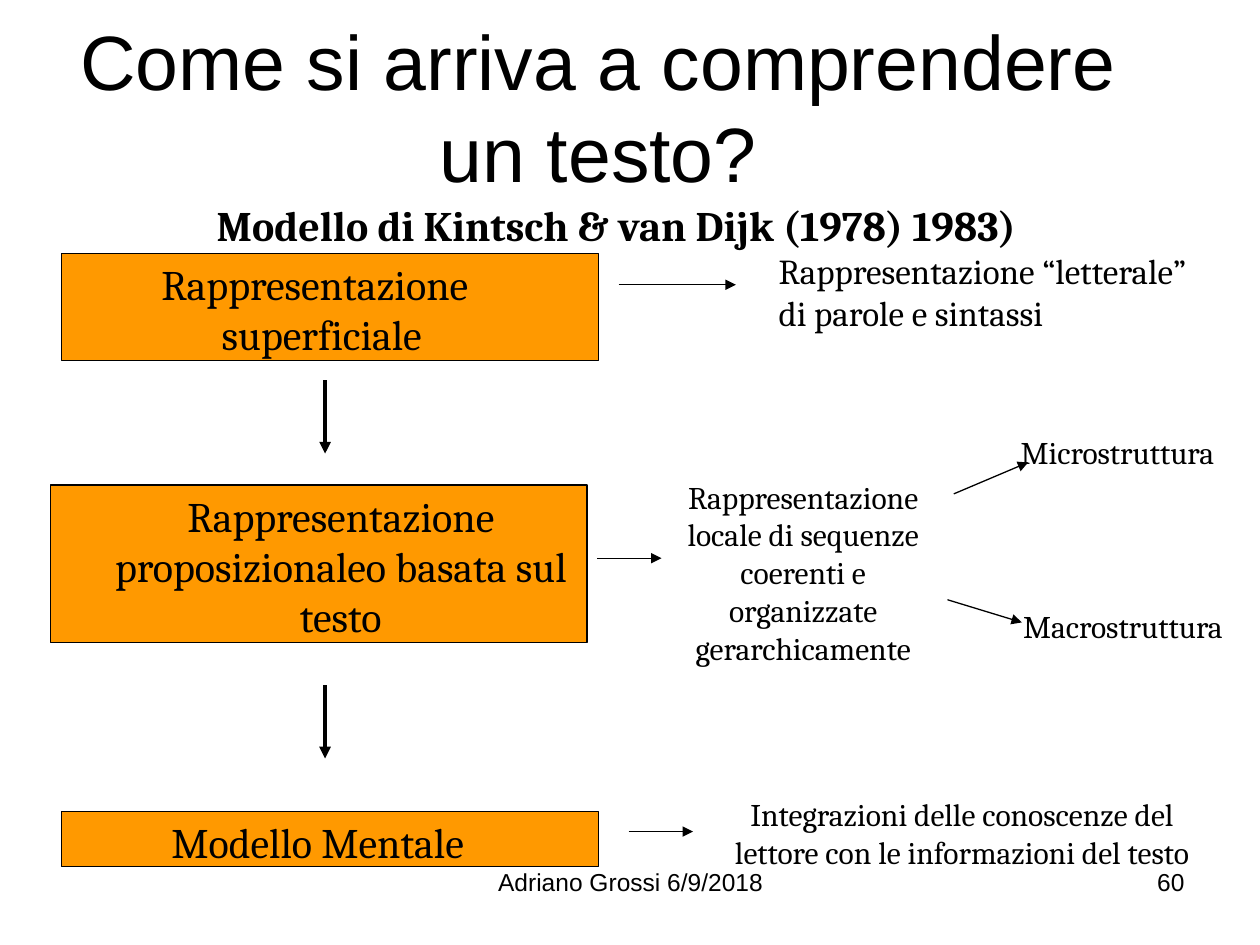
"""Build the slide on the Kintsch and van Dijk model of text comprehension."""
from dataclasses import dataclass

import lxml.etree
import pptx
import pptx.dml.color
import pptx.enum.shapes
import pptx.enum.text
import pptx.oxml.ns
import pptx.slide
import pptx.text.text
import pptx.util

Inches = pptx.util.Inches
Align = pptx.enum.text.PP_ALIGN
Anchor = pptx.enum.text.MSO_ANCHOR


@dataclass(frozen=True)
class Theme:
    ink: pptx.dml.color.RGBColor = pptx.dml.color.RGBColor(0, 0, 0)
    stage_fill: pptx.dml.color.RGBColor = pptx.dml.color.RGBColor(0xFF, 0x99, 0x00)
    serif: str = "Cambria"
    sans: str = "Arial"
    title: int = 44
    heading: int = 24
    explanation: int = 20
    note: int = 18
    footer: int = 14
    thin: float = 0.75
    thick: float = 2.25


THEME = Theme()


@dataclass(frozen=True)
class Stage:
    text: str
    left: float
    top: float
    height: float
    margin: float
    indent: float = 0
    align: Align = Align.LEFT


@dataclass(frozen=True)
class Label:
    text: str
    left: float
    top: float
    width: float
    height: float
    size: int = THEME.note
    align: Align = Align.LEFT
    font: str = THEME.serif
    bold: bool = False
    inset_x: float = 0
    inset_y: float = 0


@dataclass(frozen=True)
class Arrow:
    start: tuple[float, float]
    end: tuple[float, float]
    width: float = THEME.thin


STAGE_WIDTH = 4.26
STAGES = (
    Stage("Rappresentazione superficiale", 0.49, 2.01, 0.85, 1.27, -0.48),
    Stage("Rappresentazione proposizionaleo basata sul testo", 0.4, 3.85, 1.25, 0.35, align=Align.CENTER),
    Stage("Modello Mentale", 0.49, 6.44, 0.44, 0.87),
)
LABELS = (
    Label("Modello di Kintsch & van Dijk (1978) 1983)", 1.72, 1.58, 6.6, 0.81, THEME.heading, bold=True),
    Label("Rappresentazione “letterale” di parole e sintassi", 6.18, 1.98, 3.4, 0.68, THEME.explanation),
    Label("Rappresentazione locale di sequenze coerenti e organizzate gerarchicamente",
          5.36, 3.79, 2.03, 1.52, align=Align.CENTER),
    Label("Microstruttura", 8.1, 3.44, 1.68, 0.31),
    Label("Macrostruttura", 8.12, 4.82, 1.73, 0.31),
    Label("Integrazioni delle conoscenze del lettore con le informazioni del testo",
          5.79, 6.31, 3.69, 0.91, align=Align.CENTER),
    Label("Adriano Grossi 6/9/2018", 3.42, 6.83, 3.17, 0.52, THEME.footer, Align.CENTER, THEME.sans,
          inset_x=0.1, inset_y=0.05),
    Label("60", 7.17, 6.83, 2.33, 0.52, THEME.footer, Align.RIGHT, THEME.sans, inset_x=0.1, inset_y=0.05),
)
ARROWS = (
    Arrow((4.91, 2.26), (5.84, 2.26)),
    Arrow((4.74, 4.43), (5.25, 4.43)),
    Arrow((4.99, 6.6), (5.5, 6.6)),
    Arrow((7.57, 3.92), (8.16, 3.67)),
    Arrow((7.52, 4.76), (8.11, 4.94)),
    Arrow((2.58, 3.02), (2.58, 3.6), THEME.thick),
    Arrow((2.58, 5.44), (2.58, 6.02), THEME.thick),
)


def write_text(frame: pptx.text.text.TextFrame, text: str, size: int, align: Align, font: str = THEME.serif,
               bold: bool = False, inset_x: float = 0, inset_y: float = 0,
               anchor: Anchor = Anchor.TOP) -> pptx.text.text._Paragraph:
    """Fill a text frame with one formatted paragraph and return it."""
    frame.word_wrap = True
    frame.auto_size = pptx.enum.text.MSO_AUTO_SIZE.NONE
    frame.vertical_anchor = anchor
    frame.margin_left = frame.margin_right = Inches(inset_x)
    frame.margin_top = frame.margin_bottom = Inches(inset_y)
    frame.text = text
    paragraph = frame.paragraphs[0]
    paragraph.alignment = align
    paragraph.font.name = font
    paragraph.font.size = pptx.util.Pt(size)
    paragraph.font.bold = bold
    paragraph.font.color.rgb = THEME.ink
    return paragraph


def draw_title(slide: pptx.slide.Slide, text: str) -> None:
    """Place and format the title placeholder."""
    title = slide.shapes.title
    title.left, title.top, title.width, title.height = map(Inches, (0.25, 0.1, 9, 1.48))
    write_text(title.text_frame, text, THEME.title, Align.CENTER, THEME.sans, anchor=Anchor.MIDDLE)


def draw_stage(slide: pptx.slide.Slide, stage: Stage) -> None:
    """Draw one orange stage of the model."""
    shape = slide.shapes.add_shape(
        pptx.enum.shapes.MSO_SHAPE.RECTANGLE,
        *map(Inches, (stage.left, stage.top, STAGE_WIDTH, stage.height)))
    shape.shadow.inherit = False
    shape.fill.solid()
    shape.fill.fore_color.rgb = THEME.stage_fill
    shape.line.color.rgb = THEME.ink
    shape.line.width = pptx.util.Pt(THEME.thin)
    paragraph = write_text(shape.text_frame, stage.text, THEME.heading, stage.align)
    shape.text_frame.margin_top = Inches(0.04)
    paragraph.space_before = pptx.util.Pt(2.9)
    properties = paragraph._p.get_or_add_pPr()
    properties.set("marL", str(Inches(stage.margin)))
    properties.set("indent", str(Inches(stage.indent)))


def draw_label(slide: pptx.slide.Slide, label: Label) -> None:
    """Draw one text box."""
    box = slide.shapes.add_textbox(*map(Inches, (label.left, label.top, label.width, label.height)))
    write_text(box.text_frame, label.text, label.size, label.align, label.font, label.bold,
               label.inset_x, label.inset_y)


def draw_arrow(slide: pptx.slide.Slide, arrow: Arrow) -> None:
    """Draw one straight arrow with a triangular head."""
    connector = slide.shapes.add_connector(
        pptx.enum.shapes.MSO_CONNECTOR.STRAIGHT, *map(Inches, arrow.start + arrow.end))
    connector.line.color.rgb = THEME.ink
    connector.line.width = pptx.util.Pt(arrow.width)
    qualified = pptx.oxml.ns.qn
    lxml.etree.SubElement(connector.line._get_or_add_ln(), qualified("a:tailEnd"), type="triangle")
    lxml.etree.SubElement(connector._element.spPr, qualified("a:effectLst"))


def main() -> None:
    """Build and save the presentation."""
    presentation = pptx.Presentation()
    presentation.slide_width, presentation.slide_height = Inches(10), Inches(7.5)
    slide = presentation.slides.add_slide(presentation.slide_layouts.get_by_name("Title Only"))
    draw_title(slide, "Come si arriva a comprendere un testo?")
    for stage in STAGES:
        draw_stage(slide, stage)
    for label in LABELS:
        draw_label(slide, label)
    for arrow in ARROWS:
        draw_arrow(slide, arrow)
    presentation.save("out.pptx")


if __name__ == "__main__":
    main()
